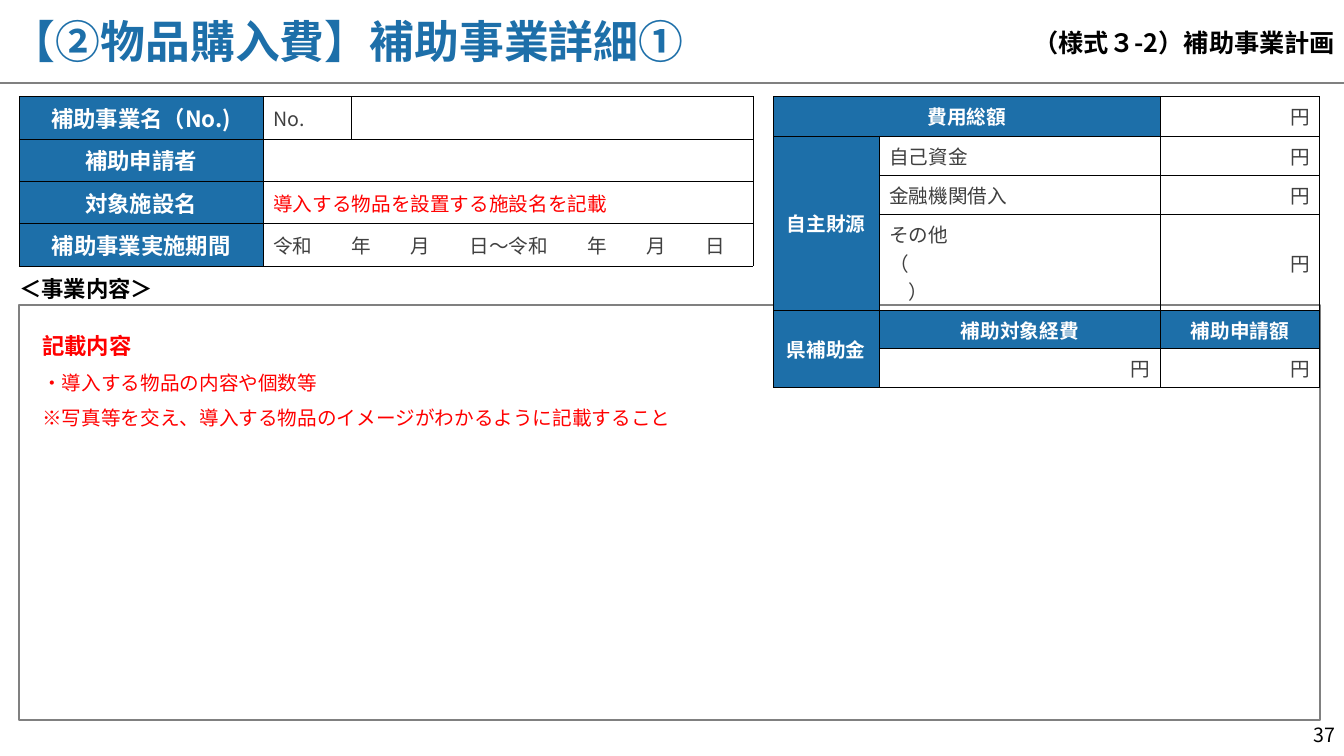
from lxml import etree
from pptx import Presentation
from pptx.dml.color import RGBColor
from pptx.enum.shapes import MSO_CONNECTOR, MSO_SHAPE
from pptx.enum.text import MSO_ANCHOR, PP_ALIGN
from pptx.oxml.ns import qn
from pptx.util import Inches, Pt

LEFT, MID, RIGHT = PP_ALIGN.LEFT, PP_ALIGN.CENTER, PP_ALIGN.RIGHT
TOP, MIDDLE = MSO_ANCHOR.TOP, MSO_ANCHOR.MIDDLE
RECT, STRAIGHT = MSO_SHAPE.RECTANGLE, MSO_CONNECTOR.STRAIGHT
FONT = "Noto Sans CJK JP"
HEX = {"blue": "1D6FA9", "gray": "808080", "dark": "404040",
       "red": "FF0000", "black": "000000", "white": "FFFFFF"}


def color(name):
    return RGBColor.from_string(HEX[name])


def write(para, text, size, tone, bold=False, align=LEFT):
    para.alignment = align
    run = para.add_run()
    run.text = text
    font = run.font
    font.size, font.bold = Pt(size), bold
    font.color.rgb = color(tone)
    font.name = FONT
    etree.SubElement(run._r.get_or_add_rPr(), qn("a:ea"), typeface=FONT)


def add_text(slide, box, lines, anchor=TOP, pad=(0, 0), space=None):
    """Each line holds text, size, colour, bold and alignment."""
    frame = slide.shapes.add_textbox(*map(Inches, box)).text_frame
    frame.word_wrap = True
    frame.vertical_anchor = anchor
    frame.margin_left = frame.margin_right = Inches(pad[0])
    frame.margin_top = frame.margin_bottom = Inches(pad[1])
    for i, line in enumerate(lines):
        para = frame.add_paragraph() if i else frame.paragraphs[0]
        if space:
            para.line_spacing = space
        write(para, *line)


def style_cell(cell, size):
    """Thin black borders, no fill, and a text size for empty cells."""
    props = cell._tc.get_or_add_tcPr()
    for side in ("lnL", "lnR", "lnT", "lnB"):
        edge = etree.SubElement(props, qn("a:" + side), w=str(Pt(0.5)))
        fill = etree.SubElement(edge, qn("a:solidFill"))
        etree.SubElement(fill, qn("a:srgbClr"), val=HEX["black"])
    cell.fill.background()
    cell.vertical_anchor = MIDDLE
    para = cell.text_frame.paragraphs[0]._p
    etree.SubElement(para, qn("a:endParaRPr"), sz=str(size * 100))


def add_grid(slide, left, top, cols, rows, merges, size):
    box = map(Inches, (left, top, sum(cols), sum(rows)))
    table = slide.shapes.add_table(len(rows), len(cols), *box).table
    table.first_row = table.horz_banding = False
    for col, width in zip(table.columns, cols):
        col.width = Inches(width)
    for row, height in zip(table.rows, rows):
        row.height = Inches(height)
    for cell in table.iter_cells():
        style_cell(cell, size)
    for start, end in merges:
        table.cell(*start).merge(table.cell(*end))
    return table


def fill_cell(cell, text, size, tone="dark", align=LEFT):
    write(cell.text_frame.paragraphs[0], text, size, tone, False, align)


def head_cell(cell, text, size):
    cell.fill.solid()
    cell.fill.fore_color.rgb = color("blue")
    write(cell.text_frame.paragraphs[0], text, size, "white", True, MID)


def add_header(slide, left, top, width, height):
    rule = slide.shapes.add_connector(
        STRAIGHT, *map(Inches, (left, top + height, left + width, top + height)))
    rule.line.color.rgb = color("gray")
    rule.line.width = Pt(1.5)
    etree.SubElement(rule._element.spPr, qn("a:effectLst"))
    add_text(slide, (left + 0.01, top, 10.59, 0.8),
             [("【②物品購入費】補助事業詳細①", 32, "blue", True)],
             MIDDLE, (0.1, 0.05))
    add_text(slide, (left + width - 5.05, top + 0.09, 5.06, 0.66),
             [("（様式３-2）補助事業計画", 18, "black", True, RIGHT)],
             MIDDLE, (0.1, 0.04))


def add_project(slide, left, top):
    spans = [((r, 1), (r, 2)) for r in (1, 2, 3)]
    table = add_grid(slide, left, top, (2.42, 0.87, 3.99), (0.42,) * 4, spans, 14)
    rows = [("補助事業名（No.)", "No.", "dark"),
            ("補助申請者", "", "dark"),
            ("対象施設名", "導入する物品を設置する施設名を記載", "red"),
            ("補助事業実施期間",
             "令和　　年　　月　　日～令和　　年　　月　　日", "dark")]
    for r, (head, text, tone) in enumerate(rows):
        head_cell(table.cell(r, 0), head, 16)
        if text:
            fill_cell(table.cell(r, 1), text, 14, tone)


def add_funds(slide, left, top):
    spans = [((0, 0), (0, 1)), ((1, 0), (3, 0)), ((4, 0), (5, 0))]
    # The fourth row holds three lines of text
    rows = (0.39, 0.39, 0.39, 0.95, 0.38, 0.38)
    table = add_grid(slide, left, top, (1.05, 2.79, 1.58), rows, spans, 14)
    heads = {(0, 0): "費用総額", (1, 0): "自主財源", (4, 0): "県補助金",
             (4, 1): "補助対象経費", (4, 2): "補助申請額"}
    for spot, text in heads.items():
        head_cell(table.cell(*spot), text, 14)
    items = ("自己資金", "金融機関借入", "その他（　　　　　　　　　　　　　）")
    for r, text in enumerate(items, 1):
        fill_cell(table.cell(r, 1), text, 14)
    for spot in ((0, 2), (1, 2), (2, 2), (3, 2), (5, 1), (5, 2)):
        fill_cell(table.cell(*spot), "円", 14, align=RIGHT)


def add_content(slide, left, top, width, height):
    frame = slide.shapes.add_shape(RECT, *map(Inches, (left, top, width, height)))
    frame.shadow.inherit = False
    frame.fill.background()
    frame.line.color.rgb = color("gray")
    frame.line.width = Pt(1.5)
    add_text(slide, (left, top - 0.43, 3.04, 0.56),
             [("＜事業内容＞", 16, "black", True)], space=1.5)
    add_text(slide, (left + 0.23, top + 0.13, 6.5, 2.34),
             [("記載内容", 16, "red", True),
              ("・導入する物品の内容や個数等", 14, "red"),
              ("※写真等を交え、導入する物品のイメージがわかるように記載すること",
               14, "red")], space=1.5)


def main():
    deck = Presentation()
    deck.slide_width, deck.slide_height = Inches(13.33), Inches(7.5)
    slide = deck.slides.add_slide(deck.slide_layouts[6])
    add_header(slide, 0, 0, 13.33, 0.82)
    # The funds table lies over the content frame
    add_content(slide, 0.19, 3.03, 12.9, 4.11)
    add_project(slide, 0.19, 0.96)
    add_funds(slide, 7.67, 0.96)
    # Page number
    add_text(slide, (12.67, 7.12, 0.67, 0.38),
             [("37", 14, "black", False, RIGHT)], pad=(0.1, 0.05))
    deck.save("out.pptx")


if __name__ == "__main__":
    main()
